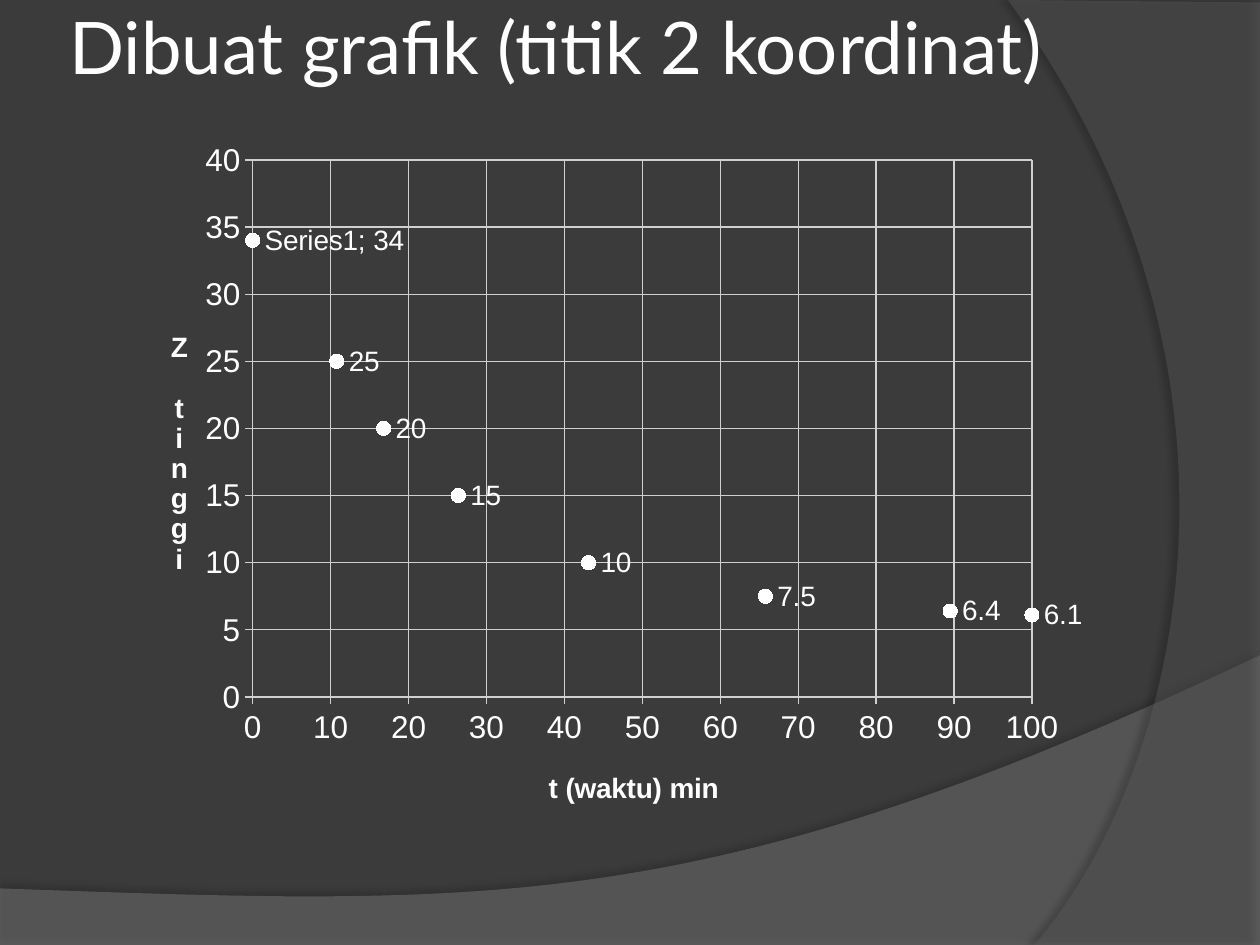
from lxml.etree import SubElement
from pptx import Presentation
from pptx.chart.data import XyChartData
from pptx.dml.color import RGBColor
from pptx.enum.chart import XL_CHART_TYPE as ChartType
from pptx.enum.chart import XL_LABEL_POSITION as LabelPosition
from pptx.enum.chart import XL_MARKER_STYLE as MarkerStyle
from pptx.enum.chart import XL_TICK_MARK as TickMark
from pptx.enum.text import MSO_ANCHOR as Anchor
from pptx.oxml.ns import qn
from pptx.util import Cm, Pt

BACKGROUND = RGBColor(0x3B, 0x3B, 0x3B)
WHITE = RGBColor(0xFF, 0xFF, 0xFF)
GRID = RGBColor(0xD0, 0xD0, 0xD0)
WAVE = RGBColor(0x7F, 0x7F, 0x7F)
ARC = RGBColor(0x5E, 0x5E, 0x5E)
TIMES = [0, 10.8, 16.8, 26.4, 43.1, 65.8, 89.5, 100]
HEIGHTS = [34, 25, 20, 15, 10, 7.5, 6.4, 6.1]


def bezier(start, control_1, control_2, end, steps=60):
    points = []
    for step in range(steps + 1):
        t = step / steps
        weights = ((1 - t) ** 3, 3 * t * (1 - t) ** 2, 3 * t * t * (1 - t), t ** 3)
        corners = (start, control_1, control_2, end)
        points.append(tuple(sum(w * c[axis] for w, c in zip(weights, corners))
                            for axis in (0, 1)))
    return points


def set_layout(element, index, **fractions):
    layout = element.find(qn("c:layout"))
    if layout is None:
        layout = element.makeelement(qn("c:layout"))
        element.insert(index, layout)
    manual = SubElement(layout, qn("c:manualLayout"))
    if "w" in fractions:
        SubElement(manual, qn("c:layoutTarget"), val="inner")
    for mode in ("xMode", "yMode"):
        SubElement(manual, qn(f"c:{mode}"), val="edge")
    for name, value in fractions.items():
        SubElement(manual, qn(f"c:{name}"), val=str(value))


class Deck:
    title_font = "Lato"
    chart_font = "Arial"

    def __init__(self):
        self.presentation = Presentation()
        self.presentation.slide_width = Cm(25.4)
        self.presentation.slide_height = Cm(19.05)
        self.slide = self.presentation.slides.add_slide(
            self.presentation.slide_layouts[6])
        background = self.slide.background.fill
        background.solid()
        background.fore_color.rgb = BACKGROUND

    def style(self, font, size, name, bold=False):
        font.size = Pt(size)
        font.name = name
        font.bold = bold
        font.color.rgb = WHITE

    def decoration(self, points, color, opacity, shadow_opacity, distance, angle):
        start, *rest = [(Cm(x), Cm(y)) for x, y in points]
        builder = self.slide.shapes.build_freeform(*start)
        builder.add_line_segments(rest, close=True)
        shape = builder.convert_to_shape()
        shape.fill.solid()
        shape.fill.fore_color.rgb = color
        shape.line.fill.background()
        shape.shadow.inherit = False
        properties = shape._element.spPr
        fill_color = properties.find(qn("a:solidFill")).find(qn("a:srgbClr"))
        SubElement(fill_color, qn("a:alpha"), val=str(opacity * 1000))
        shadow = SubElement(properties.find(qn("a:effectLst")), qn("a:outerShdw"),
                            blurRad=str(Pt(4)), dist=str(Pt(distance)),
                            dir=str(angle * 60000), algn="ctr", rotWithShape="0")
        shadow_color = SubElement(shadow, qn("a:srgbClr"), val="000000")
        SubElement(shadow_color, qn("a:alpha"), val=str(shadow_opacity * 1000))

    def title(self, text, left, top, width, height, size):
        frame = self.slide.shapes.add_textbox(
            Cm(left), Cm(top), Cm(width), Cm(height)).text_frame
        frame.word_wrap = True
        frame.vertical_anchor = Anchor.MIDDLE
        frame.margin_left = frame.margin_right = Cm(0.13)
        frame.margin_top = frame.margin_bottom = Cm(0.13)
        run = frame.paragraphs[0].add_run()
        run.text = text
        self.style(run.font, size, self.title_font)

    def axis(self, axis, heading, maximum, step, x, y):
        axis.minimum_scale = 0
        axis.maximum_scale = maximum
        axis.major_unit = step
        axis.major_tick_mark = TickMark.CROSS
        axis.minor_tick_mark = TickMark.NONE
        axis.has_major_gridlines = True
        for line in (axis.format.line, axis.major_gridlines.format.line):
            line.color.rgb = GRID
            line.width = Pt(0.75)
        self.style(axis.tick_labels.font, 18, self.chart_font)
        frame = axis.axis_title.text_frame
        run = frame.paragraphs[0].add_run()
        run.text = heading
        self.style(run.font, 16, self.chart_font, bold=True)
        set_layout(axis.axis_title._element, 1, x=x, y=y)
        return frame

    def scatter(self, left, top, width, height):
        data = XyChartData()
        measurements = data.add_series("Series1")
        for time, level in zip(TIMES, HEIGHTS):
            measurements.add_data_point(time, level)
        chart = self.slide.shapes.add_chart(
            ChartType.XY_SCATTER, Cm(left), Cm(top), Cm(width), Cm(height), data).chart
        chart.has_legend = False
        chart.has_title = False
        self.style(chart.font, 10, self.chart_font)
        plot = chart.plots[0]
        plot.vary_by_categories = False
        set_layout(chart._chartSpace.chart.plotArea, 0,
                   x=0.122, y=0.045, w=0.825, h=0.768)

        self.axis(chart.category_axis, "t (waktu) min", 100, 10, 0.43, 0.91)
        level_title = self.axis(chart.value_axis, "Z tinggi", 40, 5, 0.03, 0.28)
        level_title._txBody.bodyPr.set("vert", "wordArtVert")

        series = plot.series[0]
        series.smooth = False
        series.format.line.fill.background()
        series.marker.style = MarkerStyle.CIRCLE
        series.marker.size = 8
        series.marker.format.fill.solid()
        series.marker.format.fill.fore_color.rgb = WHITE
        series.marker.format.line.fill.background()
        for index in range(len(TIMES)):
            label = series.points[index].data_label
            self.style(label.font, 16, self.chart_font)
            label.position = LabelPosition.RIGHT
        first_label = series._element.find(qn("c:dLbls")).find(qn("c:dLbl"))
        first_label.find(qn("c:showSerName")).set("val", "1")
        SubElement(first_label, qn("c:separator")).text = "; "

    def save(self):
        self.presentation.save("out.pptx")


def main():
    deck = Deck()
    wave_edge = bezier((25.4, 13.21), (14.2, 18.52), (9.93, 18.26), (0, 17.91))
    deck.decoration([(0, 19.08), (25.4, 19.08)] + wave_edge, WAVE, 45, 35, 3.5, 270)
    arc_edge = bezier((20.85, 19.05), (23.75, 15.72), (25.86, 7.62), (20.32, 0))
    deck.decoration([(25.4, 0.05), (25.4, 19.05)] + arc_edge, ARC, 40, 45, 4, 180)
    deck.title("Dibuat grafik (titik 2 koordinat)", 1.27, 0.2, 22.86, 1.42, 41.4)
    deck.scatter(2.77, 2.59, 19.05, 14.1)
    deck.save()


if __name__ == "__main__":
    main()
